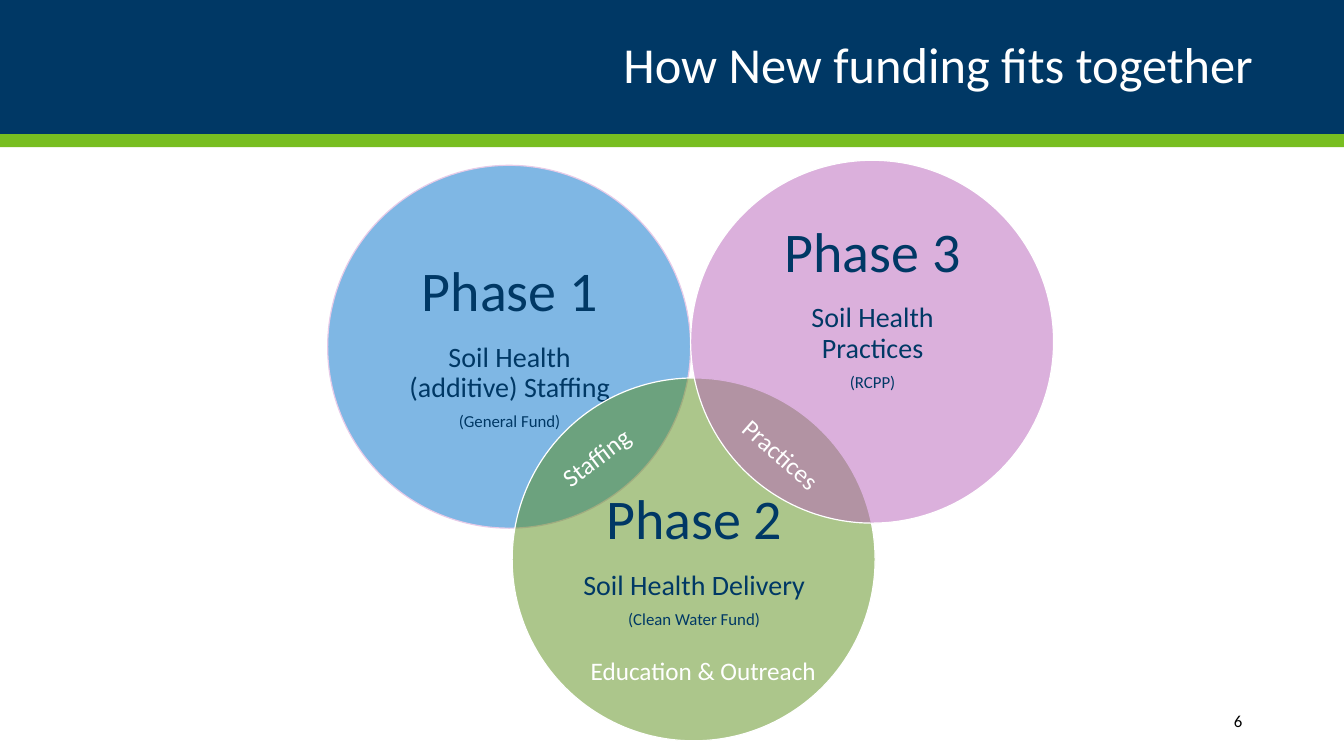
from lxml import etree
from pptx import Presentation
from pptx.dml.color import RGBColor
from pptx.enum.shapes import MSO_SHAPE as Shape
from pptx.enum.text import MSO_ANCHOR as Anchor, PP_ALIGN as Align
from pptx.oxml.ns import qn
from pptx.util import Emu, Pt

PX = 9144  # 100 px to the inch
COLORS = {
    "navy": "003865", "green": "78BE21", "white": "FFFFFF", "black": "000000",
    "blue": "0071CB", "olive": "5A8E19", "purple": "B862BB", "pink": "E7CBE8",
}


def px(length):
    return Emu(length * PX)


def color(name):
    return RGBColor.from_string(COLORS[name])


class FundingSlide:
    font = "Calibri"
    diameter = 360
    text_size = 255
    text_inset = 17
    label_height = 40

    def __init__(self, deck):
        self.page = deck.slides.add_slide(deck.slide_layouts[5])

    def place(self, item, left, top, width, height):
        item.left, item.top = px(left), px(top)
        item.width, item.height = px(width), px(height)

    def fill(self, item, name):
        item.fill.solid()
        item.fill.fore_color.rgb = color(name)

    def style_text(self, para, text, size, ink, align=Align.LEFT):
        para.text = text
        para.alignment = align
        for span in para.runs:
            span.font.name = self.font
            span.font.size = Pt(size)
            span.font.color.rgb = color(ink)

    def shape(self, kind, left, top, width, height, fill):
        item = self.page.shapes.add_shape(
            kind, px(left), px(top), px(width), px(height))
        item.shadow.inherit = False
        self.fill(item, fill)
        item.line.fill.background()
        return item

    def title(self, text, height):
        box = self.page.shapes.title
        self.place(box, 0, 0, 1333, height)
        self.fill(box, "navy")
        frame = box.text_frame
        frame.margin_left = frame.margin_right = px(90)
        frame.margin_top = frame.margin_bottom = px(5)
        frame.vertical_anchor = Anchor.MIDDLE
        para = frame.paragraphs[0]
        self.style_text(para, text, 36, "white", Align.RIGHT)
        para.line_spacing = 0.9

    def label(self, text, left, top, width, size=18, ink="white",
              align=Align.LEFT, anchor=Anchor.TOP, rotation=0):
        box = self.page.shapes.add_textbox(
            px(left), px(top), px(width), px(self.label_height))
        box.rotation = rotation
        frame = box.text_frame
        frame.word_wrap = True
        frame.vertical_anchor = anchor
        self.style_text(frame.paragraphs[0], text, size, ink, align)

    def circle(self, left, top, fill, outline):
        item = self.shape(Shape.OVAL, left, top, self.diameter, self.diameter, fill)
        item.line.color.rgb = color(outline)
        item.line.width = Pt(0.85)
        # Half transparent, so that the overlaps show
        tint = item.element.spPr.find(qn("a:solidFill"))[0]
        etree.SubElement(tint, qn("a:alpha"), val="50000")

    def phase(self, left, top, fill, outline, lines, lift):
        self.circle(left, top, fill, outline)
        offset = (self.diameter - self.text_size + 1) // 2
        box = self.page.shapes.add_textbox(
            px(left + offset), px(top + offset), px(self.text_size), px(self.text_size))
        frame = box.text_frame
        frame.word_wrap = True
        frame.vertical_anchor = Anchor.MIDDLE
        frame.margin_left = frame.margin_right = frame.margin_top = px(self.text_inset)
        # Text centred between the insets rises by half the extra bottom inset
        frame.margin_bottom = px(self.text_inset + 2 * lift)
        for index, (text, size) in enumerate(zip(lines, (40, 20, 12))):
            para = frame.add_paragraph() if index else frame.paragraphs[0]
            self.style_text(para, text, size, "navy", Align.CENTER)
            para.line_spacing = 0.9
            para.space_after = Pt(0.35 * size)


def main():
    deck = Presentation()
    deck.slide_width, deck.slide_height = px(1333), px(750)
    slide = FundingSlide(deck)

    # Header and slide number
    slide.title("How New funding fits together", 133)
    slide.shape(Shape.RECTANGLE, 0, 133, 1333, 13, "green")
    slide.label("6", 1082, 695, 160, 12, "black", Align.RIGHT, Anchor.MIDDLE)

    # Overlapping phases
    phases = (
        (325, 164, "blue", "pink",
         ("Phase 1", "Soil Health (additive) Staffing", "(General Fund)"), 0),
        (508, 375, "olive", "white",
         ("Phase 2", "Soil Health Delivery", "(Clean Water Fund)"), 0),
        (685, 159, "purple", "white",
         ("Phase 3", "Soil Health Practices", "(RCPP)"), 34),
    )
    for phase in phases:
        slide.phase(*phase)

    # What the phases share
    slide.label("Staffing", 542, 431, 104, rotation=323.1)
    slide.label("Education & Outreach", 576, 645, 249)
    slide.label("Practices", 718, 435, 124, rotation=41.5)

    deck.save("out.pptx")


if __name__ == "__main__":
    main()
